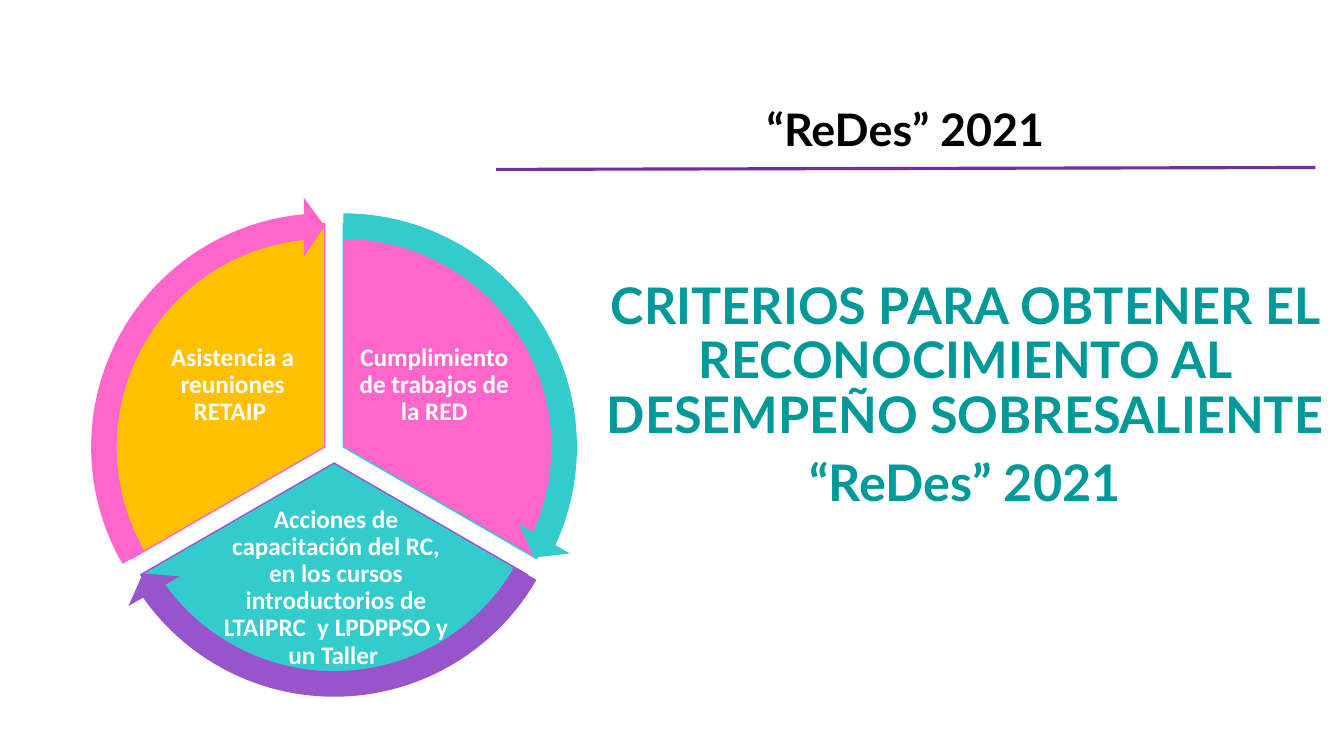
import math

import lxml.etree
import pptx
import pptx.dml.color
import pptx.enum.shapes
import pptx.enum.text
import pptx.oxml.ns
import pptx.util

Cm = pptx.util.Cm
Pt = pptx.util.Pt
RGBColor = pptx.dml.color.RGBColor
Shape = pptx.enum.shapes.MSO_SHAPE
Anchor = pptx.enum.text.MSO_ANCHOR

BLACK = RGBColor(0x00, 0x00, 0x00)
WHITE = RGBColor(0xFF, 0xFF, 0xFF)
TEAL = RGBColor(0x00, 0x99, 0x99)
TURQUOISE = RGBColor(0x33, 0xCC, 0xCC)
PINK = RGBColor(0xFF, 0x66, 0xCC)
VIOLET = RGBColor(0x99, 0x54, 0xCC)
PURPLE = RGBColor(0x70, 0x30, 0xA0)
AMBER = RGBColor(0xFF, 0xC0, 0x00)

HUB = (8.42, 11.4)
SECTOR_GAP = 0.27
PIE_SIZE = 11.25
ARROW_SIZE = 12.62
ARROW_THICKNESS = 0.051
ARROW_HEAD = 3.275
ARROW_HEAD_WIDTH = 0.059
ADJUSTMENT_PER_DEGREE = 0.6

# start angle, pie colour, arrow colour, text, text area
SECTORS = [
    (270, PINK, TURQUOISE, "Cumplimiento de trabajos de la RED",
     (8.94, 8.03, 4.01, 3.35)),
    (30, TURQUOISE, VIOLET,
     "Acciones de capacitación del RC, en los cursos introductorios de "
     "LTAIPRC  y LPDPPSO y un Taller ",
     (5.46, 13.34, 6.02, 2.95)),
    (150, AMBER, PINK, "Asistencia a reuniones RETAIP ",
     (3.86, 8.03, 4.01, 3.35)),
]


class SlideBuilder:
    """Draws elements on one page; lengths are centimetres."""

    line_spacing = 0.9
    paragraph_gap = Pt(10)

    def __init__(self, page):
        self.page = page

    def text(self, area, lines, size, font, color, margins=(0.25, 0.13), anchor=Anchor.TOP):
        box = self.page.shapes.add_textbox(*map(Cm, area))
        frame = box.text_frame
        frame.text = "\n".join(lines)
        frame.word_wrap = True
        frame.vertical_anchor = anchor
        frame.margin_left = frame.margin_right = Cm(margins[0])
        frame.margin_top = frame.margin_bottom = Cm(margins[1])
        for index, para in enumerate(frame.paragraphs):
            para.alignment = pptx.enum.text.PP_ALIGN.CENTER
            para.line_spacing = self.line_spacing
            para.space_before = self.paragraph_gap if index else Pt(0)
            for span in para.runs:
                span.font.name = font
                span.font.size = Pt(size)
                span.font.bold = True
                span.font.color.rgb = color

    def rule(self, start, end, color, width):
        line = self.page.shapes.add_connector(
            pptx.enum.shapes.MSO_CONNECTOR.STRAIGHT, *map(Cm, start + end))
        line.line.color.rgb = color
        line.line.width = Pt(width)
        lxml.etree.SubElement(line._element.spPr, pptx.oxml.ns.qn("a:effectLst"))

    def round_shape(self, kind, center, size, adjustments, fill, outline=None):
        left, top = (middle - size / 2 for middle in center)
        shape = self.page.shapes.add_shape(kind, Cm(left), Cm(top), Cm(size), Cm(size))
        for index, value in enumerate(adjustments):
            shape.adjustments[index] = value
        shape.shadow.inherit = False
        shape.fill.solid()
        shape.fill.fore_color.rgb = fill
        if outline is None:
            shape.line.fill.background()
        else:
            shape.line.color.rgb = outline
            shape.line.width = Pt(1)

    def pie(self, start, fill, outline):
        angles = (start * ADJUSTMENT_PER_DEGREE, sector_end(start) * ADJUSTMENT_PER_DEGREE)
        self.round_shape(Shape.PIE, sector_center(start), PIE_SIZE, angles, fill, outline)

    def arrow(self, start, fill):
        adjustments = (
            ARROW_THICKNESS, ARROW_HEAD,
            sector_end(start) * ADJUSTMENT_PER_DEGREE - ARROW_HEAD,
            start * ADJUSTMENT_PER_DEGREE, ARROW_HEAD_WIDTH)
        self.round_shape(Shape.CIRCULAR_ARROW, sector_center(start), ARROW_SIZE,
                         adjustments, fill)


def sector_end(start):
    return (start + 120) % 360


def sector_center(start):
    """Shift the sector away from the hub along its middle direction."""
    direction = math.radians(start + 60)
    return (HUB[0] + SECTOR_GAP * math.cos(direction),
            HUB[1] + SECTOR_GAP * math.sin(direction))


def main():
    deck = pptx.Presentation()
    deck.slide_width = Cm(33.87)
    deck.slide_height = Cm(19.05)
    builder = SlideBuilder(deck.slides.add_slide(deck.slide_layouts[6]))

    builder.rule((12.5, 4.27), (33.15, 4.22), PURPLE, 2.25)
    builder.text(
        (14.78, 6.98, 19.08, 6.48),
        ["CRITERIOS PARA OBTENER EL RECONOCIMIENTO AL DESEMPEÑO SOBRESALIENTE",
         " “ReDes” 2021 "],
        36, "Lato", TEAL, margins=(0.18, 0.1))
    for start, fill, accent, label, area in SECTORS:
        builder.pie(start, fill, accent)
        builder.text(area, [label], 18, "Calibri", WHITE,
                     margins=(0.08, 0.08), anchor=Anchor.MIDDLE)
    for start, _, accent, _, _ in SECTORS:
        builder.arrow(start, accent)
    builder.text((13.28, 2.59, 19.08, 1.65), [" “ReDes” 2021 "], 32, "Lato", BLACK)

    deck.save("out.pptx")


if __name__ == "__main__":
    main()
